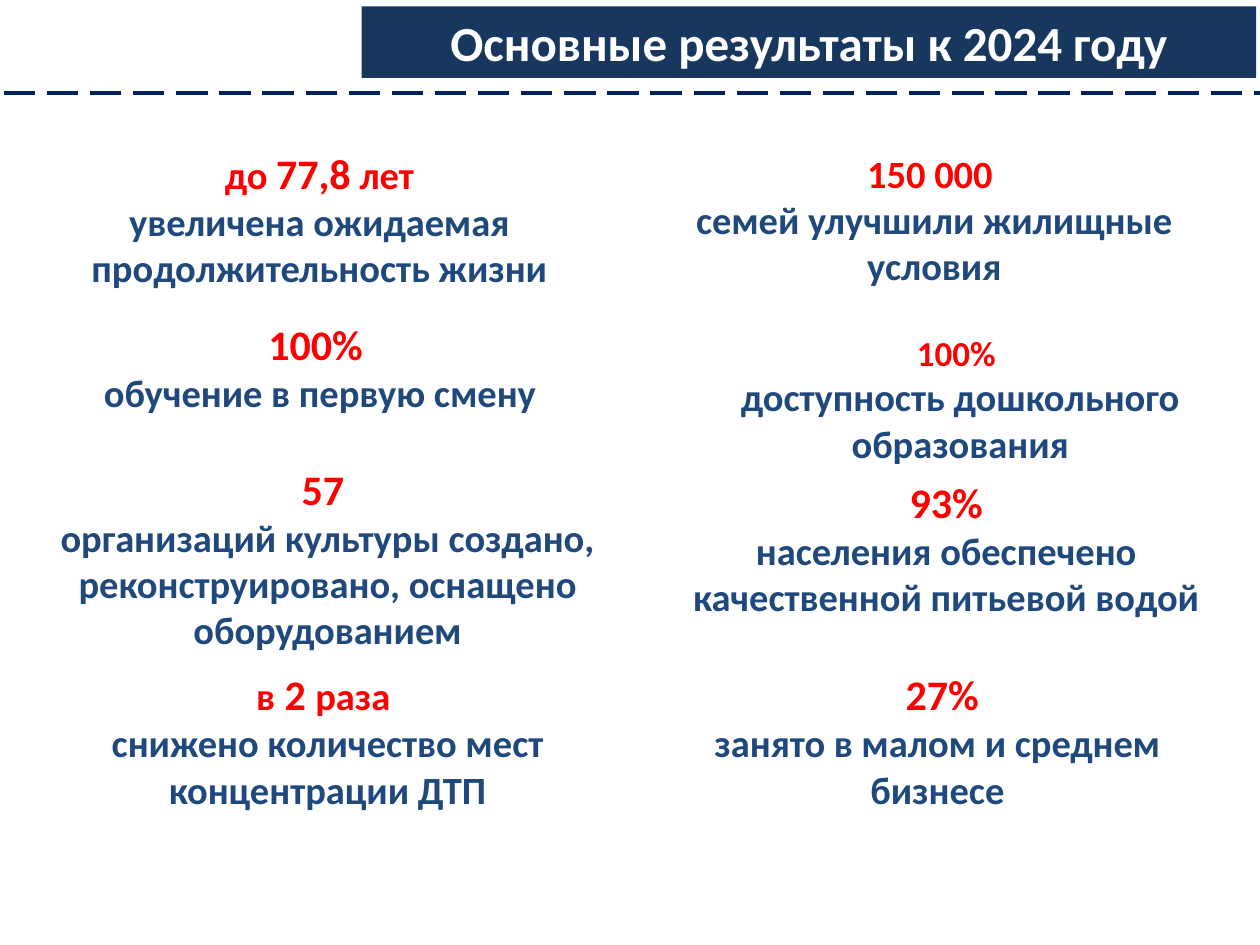
import pptx
import pptx.dml.color
import pptx.enum.dml
import pptx.enum.shapes
import pptx.enum.text
import pptx.util
from lxml import etree

Pt = pptx.util.Pt
COLORS = {"navy": "17375E", "dash": "002060", "blue": "1F497D", "red": "FF0000", "white": "FFFFFF"}

# (left, top, width, height), [(figure text, size), ...], description
RESULTS = [
    ((22.3, 80.6, 320.4, 90), [("до ", 22), ("77,8", 24), (" лет", 22)],
     "увеличена ожидаемая продолжительность жизни"),
    ((51.1, 178.6, 263.5, 63.4), [("100%", 24), (" ", 22)], "обучение в первую смену"),
    ((14.4, 261.4, 345.6, 116.6), [("57 ", 24)],
     "организаций культуры создано, реконструировано, оснащено оборудованием"),
    ((14.4, 378.7, 345.6, 90), [("в", 22), (" 2 ", 24), ("раза ", 22)],
     "снижено количество мест концентрации ДТП"),
    ((373.7, 82.1, 320.4, 87.1), [("150 000 ", 22)], "семей улучшили жилищные условия"),
    ((398.2, 185.8, 301, 85), [("100% ", 20)], "доступность дошкольного образования"),
    ((367.9, 268.6, 345.6, 90), [("93%", 24)],
     "населения обеспечено качественной питьевой водой"),
    ((362.9, 378.7, 345.6, 90), [(" 27%", 24)], "занято в малом и среднем бизнесе"),
]


def rgb(name):
    return pptx.dml.color.RGBColor.from_string(COLORS[name])


class SlideBuilder:
    font = "Calibri"
    body_size = 22
    title_size = 28

    def __init__(self, prs):
        self.s = prs.slides.add_slide(prs.slide_layouts[5])

    def style(self, p, color, size=None):
        p.alignment = pptx.enum.text.PP_ALIGN.CENTER
        p.font.name = self.font
        p.font.bold = True
        p.font.color.rgb = rgb(color)
        if size:
            p.font.size = Pt(size)

    def title(self, text, left, top, width, height):
        sp = self.s.shapes.title
        sp.left, sp.top, sp.width, sp.height = Pt(left), Pt(top), Pt(width), Pt(height)
        sp.fill.solid()
        sp.fill.fore_color.rgb = rgb("navy")
        tf = sp.text_frame
        tf.text = text
        tf.auto_size = pptx.enum.text.MSO_AUTO_SIZE.NONE
        self.style(tf.paragraphs[0], "white", self.title_size)

    def dashed_line(self, x1, x2, y):
        line = self.s.shapes.add_connector(
            pptx.enum.shapes.MSO_CONNECTOR.STRAIGHT, Pt(x1), Pt(y), Pt(x2), Pt(y))
        line.line.color.rgb = rgb("dash")
        line.line.width = Pt(2.25)
        line.line.dash_style = pptx.enum.dml.MSO_LINE.LONG_DASH
        etree.SubElement(line._element.spPr, pptx.oxml.ns.qn("a:effectLst"))

    def result(self, box, figure, description):
        """Red key figure above its blue description."""
        tf = self.s.shapes.add_textbox(*map(Pt, box)).text_frame
        tf.word_wrap = True
        tf.auto_size = pptx.enum.text.MSO_AUTO_SIZE.SHAPE_TO_FIT_TEXT
        p = tf.paragraphs[0]
        self.style(p, "red")
        for text, size in figure:
            r = p.add_run()
            r.text = text
            r.font.size = Pt(size)
        p = tf.add_paragraph()
        p.text = description
        self.style(p, "blue", self.body_size)


def main():
    prs = pptx.Presentation()
    prs.slide_width, prs.slide_height = Pt(720), Pt(540)
    slide = SlideBuilder(prs)
    slide.title("Основные результаты к 2024 году", 206.6, 3.6, 511.2, 41)
    slide.dashed_line(2.2, 725, 53.3)
    for box, figure, description in RESULTS:
        slide.result(box, figure, description)
    prs.save("out.pptx")


if __name__ == "__main__":
    main()
